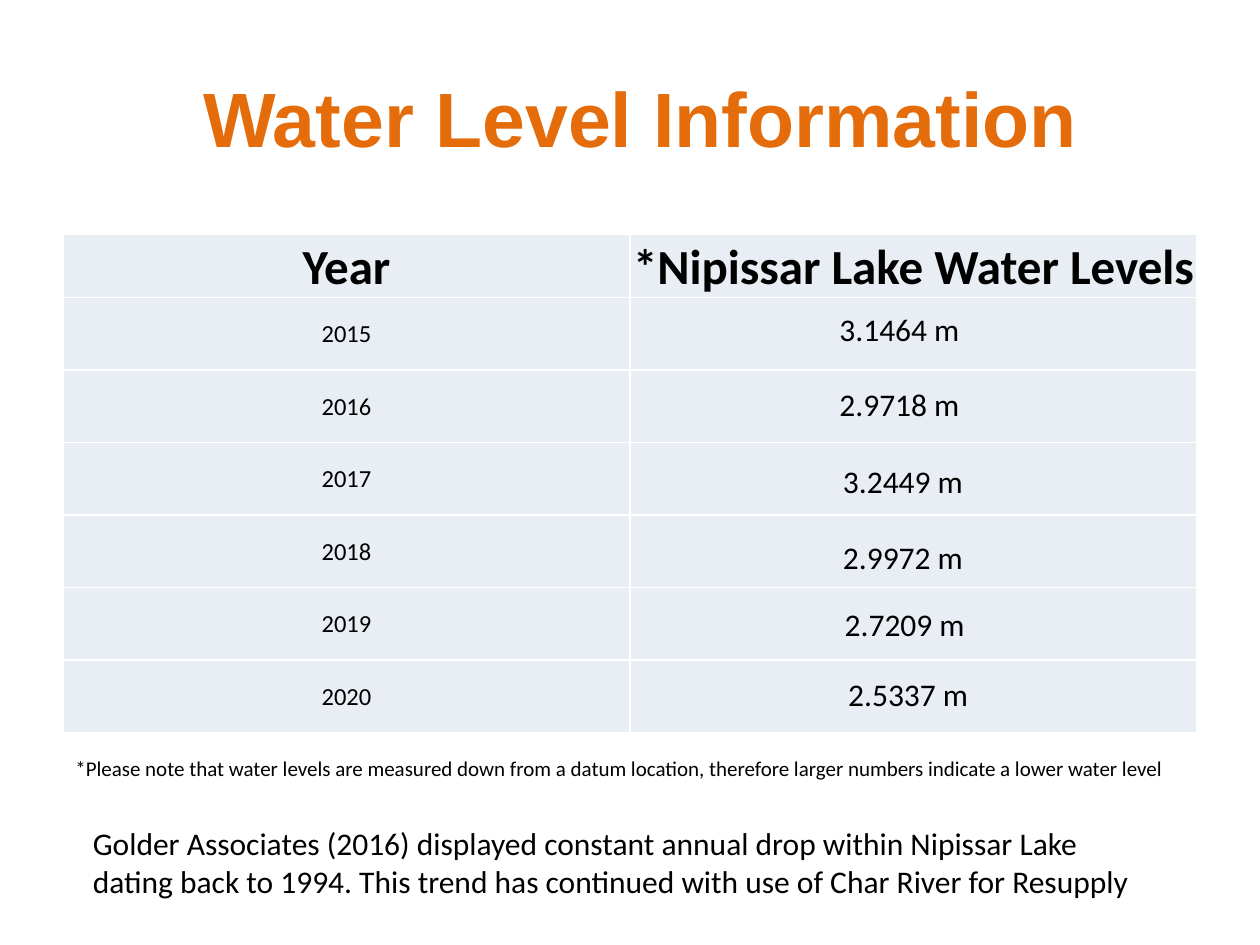
"""Build the water level slide with its table and notes."""
from lxml import etree
from pptx import Presentation
from pptx.dml.color import RGBColor
from pptx.enum import text
from pptx.oxml import ns
from pptx.util import Pt


def colour(value):
    return RGBColor.from_string(value)


class SlideBuilder:
    font = "Calibri"
    ink = "000000"
    accent = "E46C0A"
    cell_fill = "E9EDF4"
    border = "FFFFFF"

    def __init__(self, slide):
        self.slide = slide

    def add_text(self, frame, content, size, bold=False, align=text.PP_ALIGN.CENTER,
                 font=None, ink=None):
        paragraph = frame.paragraphs[0]
        paragraph.alignment = align
        run = paragraph.add_run()
        run.text = content
        run.font.name = font or self.font
        run.font.size = Pt(size)
        run.font.bold = bold
        run.font.color.rgb = colour(ink or self.ink)

    def title(self, content, left, top, width, height):
        shape = self.slide.shapes.title
        shape.left, shape.top, shape.width, shape.height = map(Pt, (left, top, width, height))
        shape.text_frame.vertical_anchor = text.MSO_ANCHOR.MIDDLE
        self.add_text(shape.text_frame, content, 44, True, font="Arial", ink=self.accent)

    def text_box(self, content, left, top, width, height, size, align=text.PP_ALIGN.LEFT):
        shape = self.slide.shapes.add_textbox(Pt(left), Pt(top), Pt(width), Pt(height))
        frame = shape.text_frame
        frame.word_wrap = True
        frame.auto_size = text.MSO_AUTO_SIZE.SHAPE_TO_FIT_TEXT
        self.add_text(frame, content, size, align=align)

    def cell_borders(self, cell):
        properties = cell._tc.get_or_add_tcPr()
        for side in ("lnL", "lnR", "lnT", "lnB"):
            line = etree.SubElement(properties, ns.qn(f"a:{side}"), w=str(Pt(1)))
            fill = etree.SubElement(line, ns.qn("a:solidFill"))
            etree.SubElement(fill, ns.qn("a:srgbClr"), val=self.border)

    def table(self, rows, left, top, width, header_height, row_height):
        height = header_height + row_height * (len(rows) - 1)
        table = self.slide.shapes.add_table(
            len(rows), len(rows[0]), Pt(left), Pt(top), Pt(width), Pt(height)).table
        table.first_row = table.horz_banding = False
        for row_index, values in enumerate(rows):
            header = row_index == 0
            table.rows[row_index].height = Pt(header_height if header else row_height)
            for column_index, value in enumerate(values):
                cell = table.cell(row_index, column_index)
                cell.margin_left = cell.margin_right = cell.margin_top = Pt(0.72)
                cell.margin_bottom = Pt(0)
                cell.vertical_anchor = (
                    text.MSO_ANCHOR.BOTTOM if header else text.MSO_ANCHOR.MIDDLE)
                self.cell_borders(cell)
                cell.fill.solid()
                cell.fill.fore_color.rgb = colour(self.cell_fill)
                if value:
                    self.add_text(cell.text_frame, value, 28 if header else 14, header)


def main():
    presentation = Presentation()
    presentation.slide_width, presentation.slide_height = Pt(720), Pt(540)
    builder = SlideBuilder(presentation.slides.add_slide(presentation.slide_layouts[5]))

    builder.title(" Water Level Information", 36, 21.6, 648, 90)
    years = [(str(year), "") for year in range(2015, 2021)]
    builder.table([("Year", "*Nipissar Lake Water Levels"), *years],
                  36, 134, 648, 36, 41.45)
    builder.text_box(
        "Golder Associates (2016) displayed constant annual drop within Nipissar Lake "
        "dating back to 1994. This trend has continued with use of Char River for Resupply",
        46, 467.3, 612, 51, 18)
    levels = [
        ("3.1464 m", 352, 173.5),
        ("2.9718 m", 352, 216.7),
        ("3.2449 m", 354, 260.6),
        ("2.9972 m", 354, 303.8),
        ("2.7209 m", 355, 342),
        ("2.5337 m", 357, 382.3),
    ]
    for level, left, top in levels:
        builder.text_box(level, left, top, 324, 29, 18, text.PP_ALIGN.CENTER)
    builder.text_box(
        "*Please note that water levels are measured down from a datum location, "
        "therefore larger numbers indicate a lower water level",
        36, 428.4, 684, 21.8, 12)

    presentation.save("out.pptx")


if __name__ == "__main__":
    main()
